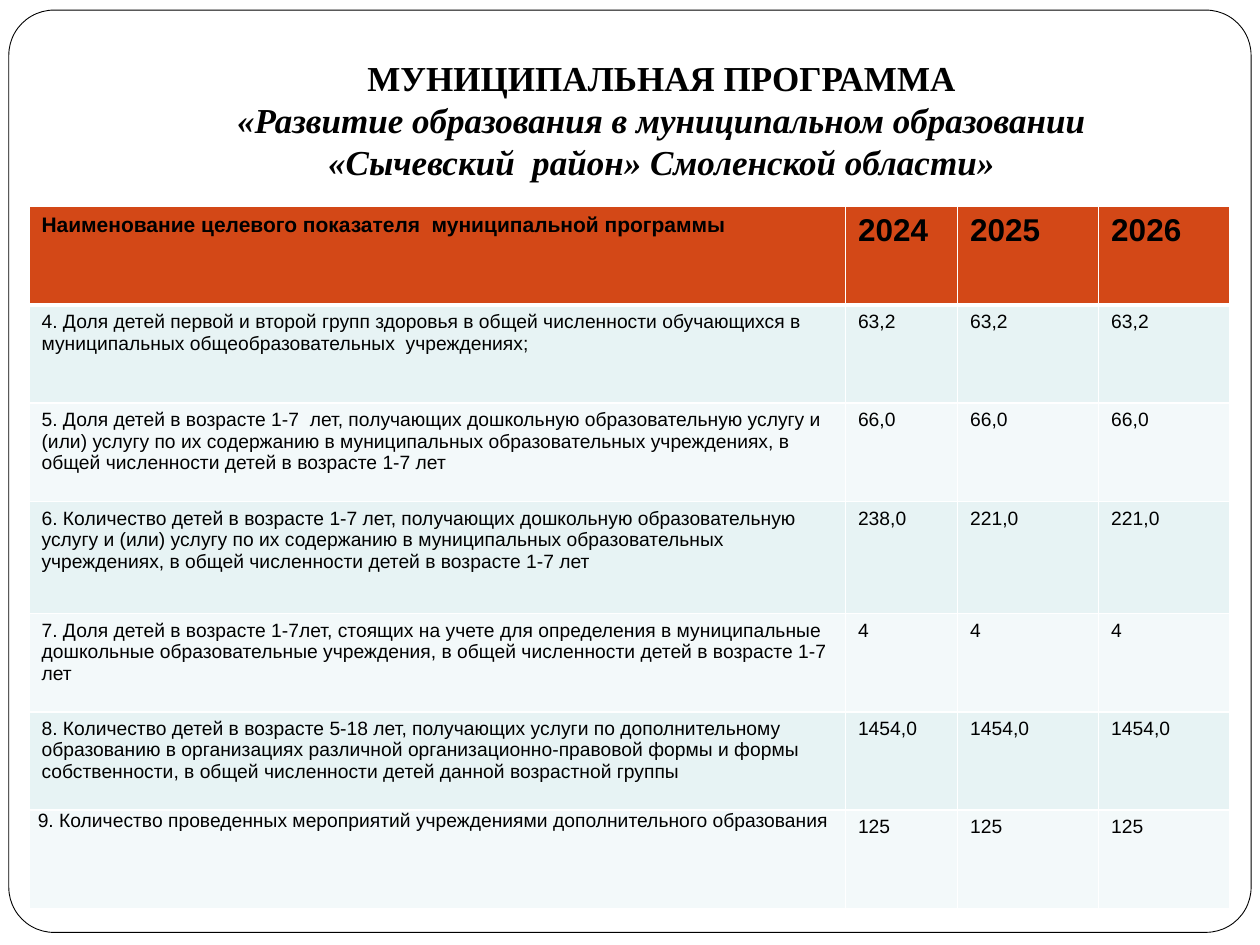
import dataclasses
import typing

import pptx
import pptx.dml.color
import pptx.enum.shapes
import pptx.enum.text
import pptx.oxml
import pptx.oxml.ns
import pptx.util

Inches = pptx.util.Inches
Pt = pptx.util.Pt


@dataclasses.dataclass(frozen=True)
class Theme:
    ink: str = "000000"
    paper: str = "FFFFFF"
    header: str = "D34817"
    bands: tuple[str, str] = ("E7F3F4", "F3F9FA")
    title_font: str = "Times New Roman"
    table_font: str = "Arial"
    title_size: float = 20
    name_size: float = 12
    year_size: float = 18
    body_size: float = 11


@dataclasses.dataclass(frozen=True)
class Box:
    left: float
    top: float
    width: float
    height: float

    def lengths(self) -> list[int]:
        return [Inches(value) for value in dataclasses.astuple(self)]


class Indicator(typing.NamedTuple):
    name: str
    values: tuple[str, str, str]


THEME = Theme()
SLIDE = (10, 7.5)
FRAME = Box(0.07, 0.08, 9.86, 7.32)
TITLE = Box(1, 0.3, 8.5, 1.25)
TABLE = Box(0.23, 1.64, 9.53, 5.55)
COLUMNS = (6.48, 0.89, 1.12, 1.04)
ROW_HEIGHT, TALL_ROW_HEIGHT, TALL_ROW = 0.78, 0.89, 3

HEADINGS = Indicator("Наименование целевого показателя  муниципальной программы",
                     ("2024", "2025", "2026"))
INDICATORS = [
    Indicator("4. Доля детей первой и второй групп здоровья в общей численности обучающихся "
              "в муниципальных общеобразовательных  учреждениях;", ("63,2",) * 3),
    Indicator("5. Доля детей в возрасте 1-7  лет, получающих дошкольную образовательную услугу "
              "и (или) услугу по их содержанию в муниципальных образовательных учреждениях, "
              "в общей численности детей в возрасте 1-7 лет", ("66,0",) * 3),
    Indicator("6. Количество детей в возрасте 1-7 лет, получающих дошкольную образовательную "
              "услугу и (или) услугу по их содержанию в муниципальных образовательных "
              "учреждениях, в общей численности детей в возрасте 1-7 лет",
              ("238,0", "221,0", "221,0")),
    Indicator("7. Доля детей в возрасте 1-7лет, стоящих на учете для определения "
              "в муниципальные дошкольные образовательные учреждения, "
              "в общей численности детей в возрасте 1-7 лет", ("4",) * 3),
    Indicator("8. Количество детей в возрасте 5-18 лет, получающих услуги по дополнительному "
              "образованию в организациях различной организационно-правовой формы и формы "
              "собственности, в общей численности детей данной возрастной группы",
              ("1454,0",) * 3),
    Indicator("9. Количество проведенных мероприятий учреждениями дополнительного образования",
              ("125",) * 3),
]


def color(value: str) -> pptx.dml.color.RGBColor:
    return pptx.dml.color.RGBColor.from_string(value)


def write(paragraph, text: str, *, font: str, size: float,
          bold: bool = False, italic: bool = False) -> None:
    run = paragraph.add_run()
    run.text = text
    run.font.name, run.font.size = font, Pt(size)
    run.font.bold, run.font.italic = bold, italic
    run.font.color.rgb = color(THEME.ink)


def set_margins(target, left: float, top: float, right: float, bottom: float) -> None:
    target.margin_left, target.margin_top = Inches(left), Inches(top)
    target.margin_right, target.margin_bottom = Inches(right), Inches(bottom)


def set_borders(cell, **widths: float) -> None:
    """Add white cell borders ahead of the fill, as the schema orders them."""
    properties = cell._tc.get_or_add_tcPr()
    for index, (side, width) in enumerate(widths.items()):
        properties.insert(index, pptx.oxml.parse_xml(
            f'<a:{side} {pptx.oxml.ns.nsdecls("a")} w="{Pt(width)}"><a:solidFill>'
            f'<a:srgbClr val="{THEME.paper}"/></a:solidFill></a:{side}>'))


def draw_frame(slide) -> None:
    shape = slide.shapes.add_shape(
        pptx.enum.shapes.MSO_SHAPE.ROUNDED_RECTANGLE, *FRAME.lengths())
    shape.adjustments[0] = 0.049
    shape.shadow.inherit = False
    shape.fill.solid()
    shape.fill.fore_color.rgb = color(THEME.paper)
    shape.line.color.rgb = color(THEME.ink)
    shape.line.width = Pt(0.5)
    shape.element.getparent().insert(2, shape.element)  # behind the title


def draw_title(slide) -> None:
    title = slide.shapes.title
    title.left, title.top, title.width, title.height = TITLE.lengths()
    frame = title.text_frame
    frame.word_wrap = True
    frame.auto_size = pptx.enum.text.MSO_AUTO_SIZE.NONE
    frame.vertical_anchor = pptx.enum.text.MSO_ANCHOR.BOTTOM
    set_margins(frame, 0.1, 0.05, 0.1, 0.1)
    paragraph = frame.paragraphs[0]
    paragraph.alignment = pptx.enum.text.PP_ALIGN.CENTER
    lines = ("МУНИЦИПАЛЬНАЯ ПРОГРАММА",
             "«Развитие образования в муниципальном образовании",
             "«Сычевский  район» Смоленской области»")
    for index, line in enumerate(lines):
        if index:
            paragraph.add_line_break()
        write(paragraph, line, font=THEME.title_font, size=THEME.title_size,
              bold=True, italic=index > 0)


def draw_table(slide) -> None:
    rows = [HEADINGS, *INDICATORS]
    table = slide.shapes.add_table(len(rows), len(COLUMNS), *TABLE.lengths()).table
    for column, width in zip(table.columns, COLUMNS):
        column.width = Inches(width)
    for row_index, indicator in enumerate(rows):
        is_header = row_index == 0
        table.rows[row_index].height = Inches(
            TALL_ROW_HEIGHT if row_index == TALL_ROW else ROW_HEIGHT)
        fill = THEME.header if is_header else THEME.bands[(row_index - 1) % 2]
        for column_index, text in enumerate((indicator.name, *indicator.values)):
            cell = table.cell(row_index, column_index)
            cell.fill.solid()
            cell.fill.fore_color.rgb = color(fill)
            set_borders(cell, lnL=1, lnR=1, lnT=3 if row_index == 1 else 1,
                        lnB=3 if is_header else 1)
            header_size = THEME.year_size if column_index else THEME.name_size
            write(cell.text_frame.paragraphs[0], text, font=THEME.table_font,
                  size=header_size if is_header else THEME.body_size, bold=is_header)
    set_margins(table.cell(len(rows) - 1, 0), 0.07, 0, 0.07, 0)


def main() -> None:
    presentation = pptx.Presentation()
    presentation.slide_width, presentation.slide_height = map(Inches, SLIDE)
    slide = presentation.slides.add_slide(presentation.slide_layouts[5])  # title only
    draw_frame(slide)
    draw_title(slide)
    draw_table(slide)
    presentation.save("out.pptx")


if __name__ == "__main__":
    main()
